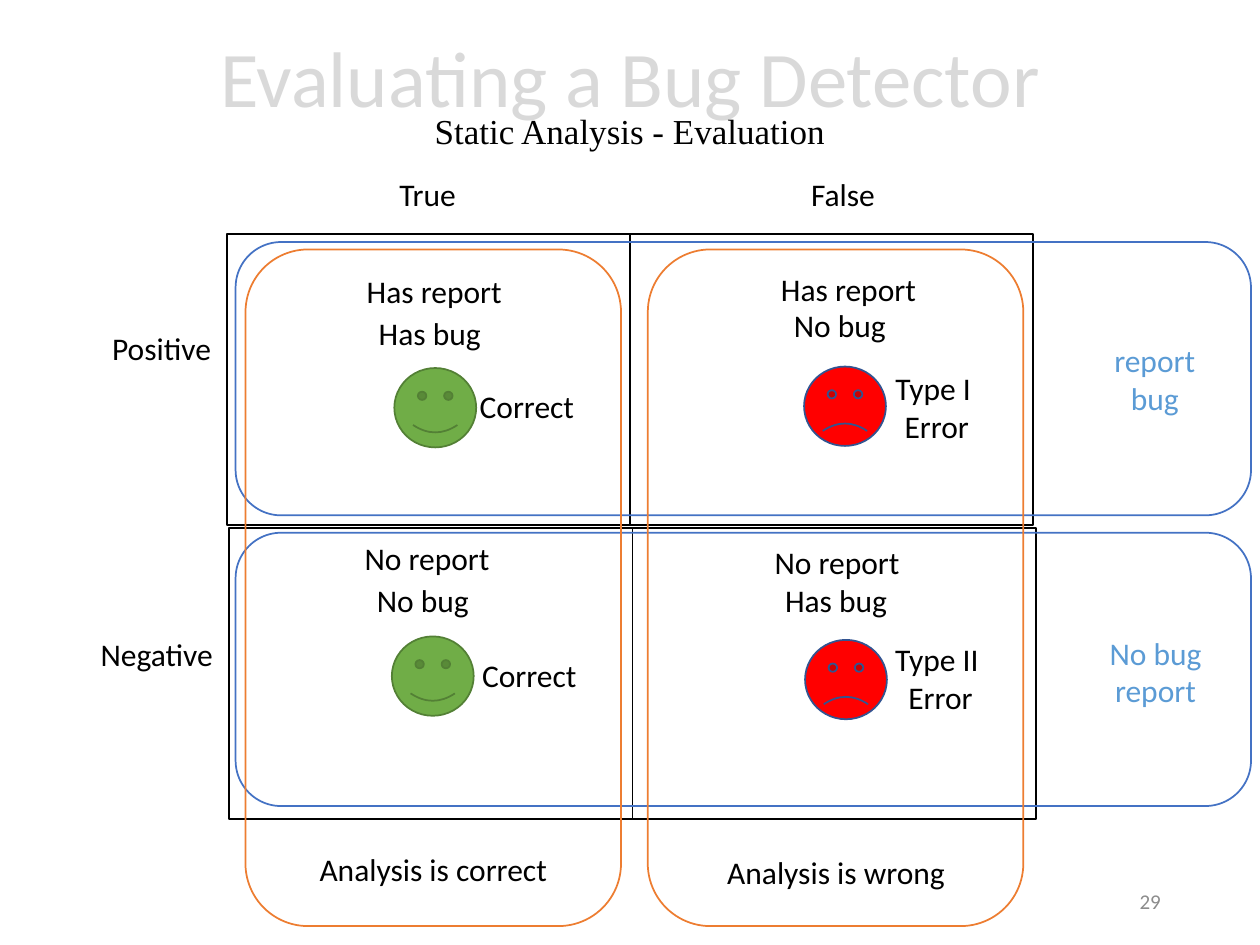
from pptx import Presentation
from pptx.dml.color import RGBColor
from pptx.enum.shapes import MSO_SHAPE
from pptx.enum.text import MSO_ANCHOR, PP_ALIGN
from pptx.util import Cm, Pt

RECT, ROUND = MSO_SHAPE.RECTANGLE, MSO_SHAPE.ROUNDED_RECTANGLE
FACE = MSO_SHAPE.SMILEY_FACE
LEFT, MID, RIGHT = PP_ALIGN.LEFT, PP_ALIGN.CENTER, PP_ALIGN.RIGHT
TOP, MIDDLE = MSO_ANCHOR.TOP, MSO_ANCHOR.MIDDLE

BLACK = RGBColor(0x00, 0x00, 0x00)
WHITE = RGBColor(0xFF, 0xFF, 0xFF)
PALE = RGBColor(0xD9, 0xD9, 0xD9)
GRAY = RGBColor(0x8C, 0x8C, 0x8C)
BLUE = RGBColor(0x44, 0x72, 0xC4)
SKY = RGBColor(0x5B, 0x9B, 0xD5)
ORANGE = RGBColor(0xED, 0x7D, 0x31)
GREEN = RGBColor(0x70, 0xAD, 0x47)
MOSS = RGBColor(0x53, 0x80, 0x35)
RED = RGBColor(0xFF, 0x00, 0x00)
NAVY = RGBColor(0x32, 0x54, 0x91)

# Content: lengths in cm
TITLE = [("Evaluating a Bug Detector", 45, "Calibri", PALE),
         ("Static Analysis - Evaluation", 20, "Times New Roman", BLACK)]
PAGE = "29"

CELL = (8.13, 5.87)
ROWS = [(4.57, 4.72), (4.62, 10.64)]      # left and top of each row
BAND = (20.47, 5.51)
BANDS = [(4.75, 4.88), (4.75, 10.74)]     # report, no report
FRAME = (7.57, 13.64)
FRAMES = [(4.95, 5.03), (13.06, 5.03)]    # correct, wrong
HEAD = (1.65, 1.6)
SMILES = [(7.95, 7.42), (7.9, 12.83)]
FROWNS = [(16.21, 7.39), (16.23, 12.9)]
FROWN = -0.047

# Labels: lines, left, top, width, wrap
SIDES = [
    (["Positive"], 2.01, 6.5, 2.54, False),
    (["Negative"], 1.78, 12.67, 2.79, False),
    (["True"], 7.8, 3.4, 1.68, False),
    (["False"], 16.1, 3.4, 1.8, False),
    (["Correct"], 9.42, 7.67, 2.44, False),
    (["Correct"], 9.47, 13.11, 2.44, False),
]
NOTES = [
    (["Has report"], 5.77, 5.36, 5.97, True),
    (["Has bug"], 7.14, 6.2, 3.05, True),
    (["No report"], 7.06, 10.74, 3.1, True),
    (["No bug"], 7.14, 11.58, 2.77, True),
    (["Has report"], 15.06, 5.31, 4.09, True),
    (["No bug"], 15.34, 6.05, 3.18, True),
    (["No report"], 14.17, 10.82, 5.41, True),
    (["Has bug"], 15.14, 11.58, 3.43, True),
    (["Analysis is correct"], 6.17, 17.02, 5.13, False),
    (["Analysis is wrong"], 14.38, 17.07, 4.95, False),
    (["Type I ", "Error"], 17.78, 7.32, 2.21, False),
    (["Type II ", "Error"], 17.78, 12.78, 2.36, False),
]
ENDS = [
    (["report", "bug"], 22.2, 6.76, 2.16, False),
    (["No bug", "report"], 22.1, 12.65, 2.39, False),
]


def add_run(para, text, size, font, color):
    run = para.add_run()
    run.text = text
    run.font.size = Pt(size)
    run.font.name = font
    run.font.color.rgb = color


def add_box(slide, left, top, width, height, wrap=True, anchor=TOP):
    box = slide.shapes.add_textbox(Cm(left), Cm(top), Cm(width), Cm(height))
    frame = box.text_frame
    frame.word_wrap = wrap
    frame.vertical_anchor = anchor
    return frame


def add_label(slide, lines, left, top, width, wrap, align, color):
    height = 1.02 if len(lines) == 1 else 1.8
    frame = add_box(slide, left, top, width, height, wrap)
    for i, line in enumerate(lines):
        para = frame.add_paragraph() if i else frame.paragraphs[0]
        para.alignment = align
        add_run(para, line, 18, "Calibri", color)


def add_form(slide, kind, spot, size, line, fill=None):
    form = slide.shapes.add_shape(kind, *map(Cm, spot + size))
    form.shadow.inherit = False
    form.line.color.rgb = line
    form.line.width = Pt(1)
    if fill is None:
        form.fill.background()
    else:
        form.fill.solid()
        form.fill.fore_color.rgb = fill
    return form


def main():
    deck = Presentation()
    deck.slide_width, deck.slide_height = Cm(25.4), Cm(19.05)
    slide = deck.slides.add_slide(deck.slide_layouts[6])

    # Title and page number
    para = add_box(slide, 0, 0.23, 25.4, 3.68, anchor=MIDDLE).paragraphs[0]
    para.alignment = MID
    para.line_spacing = 0.7
    for i, part in enumerate(TITLE):
        if i:
            para.add_line_break()
        add_run(para, *part)
    para = add_box(slide, 17.93, 17.65, 5.72, 1.02, anchor=MIDDLE).paragraphs[0]
    para.alignment = RIGHT
    add_run(para, PAGE, 12, "Calibri", GRAY)

    # Two by two grid
    for left, top in ROWS:
        for col in range(2):
            add_form(slide, RECT, (left + col * CELL[0], top), CELL, BLACK, WHITE)

    # Row bands and column frames
    for spot in BANDS:
        add_form(slide, ROUND, spot, BAND, BLUE)
    for spot in FRAMES:
        add_form(slide, ROUND, spot, FRAME, ORANGE)

    # Faces
    for spot in SMILES:
        add_form(slide, FACE, spot, HEAD, MOSS, GREEN)
    for spot in FROWNS:
        add_form(slide, FACE, spot, HEAD, NAVY, RED).adjustments[0] = FROWN

    # Labels
    for group, align, color in [(SIDES, LEFT, BLACK), (NOTES, MID, BLACK),
                                (ENDS, MID, SKY)]:
        for label in group:
            add_label(slide, *label, align, color)

    deck.save("out.pptx")


if __name__ == "__main__":
    main()
